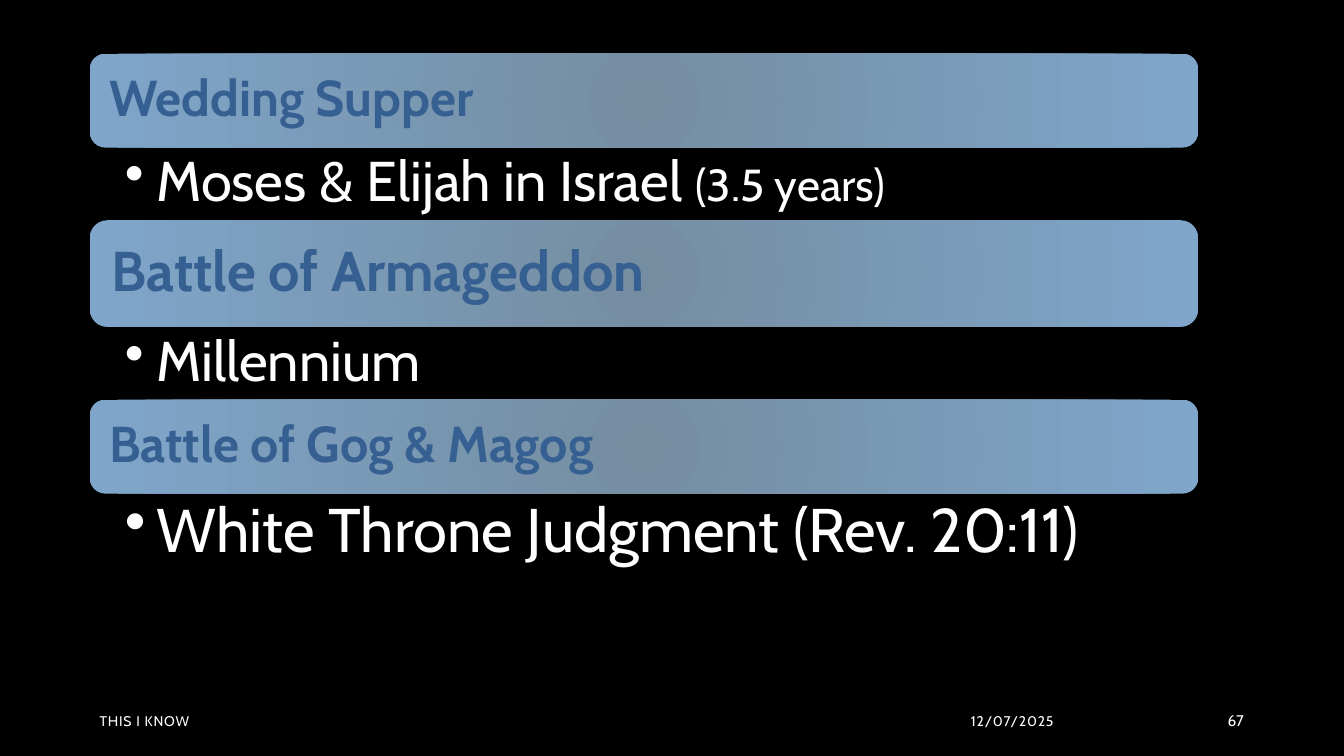
from lxml import etree
from pptx import Presentation
from pptx.dml.color import RGBColor as RGB
from pptx.enum.shapes import MSO_SHAPE as Shape
from pptx.enum.text import MSO_ANCHOR as Anchor, PP_ALIGN as Align
from pptx.oxml.ns import qn
from pptx.util import Cm, Pt

# Content: event, its size, bar height, bar padding; then what follows it,
# as (text, size) pieces, and the height of that row
EVENTS = [
    ("Wedding Supper", 36, 2.37, 0.38,
     [("Moses & Elijah in Israel ", 40), ("(3.5 years)", 32)], 1.83),
    ("Battle of Armageddon", 40, 2.69, 0.43, [("Millennium", 40)], 1.83),
    ("Battle of Gog & Magog", 36, 2.37, 0.38,
     [("White Throne Judgment (Rev. 20:11)", 44)], 2.06),
]
# Footer: text, left, width, alignment, size, letter spacing in 1/100 pt
FOOTER = [
    ("12/07/2025", 21.16, 5.64, Align.RIGHT, 10, 60),
    ("THIS I KNOW", 2.26, 10.72, Align.LEFT, 10, 60),
    ("67", 27.94, 3.66, Align.RIGHT, 11, 0),
]
THEME = {
    "font": "Cabin",
    "background": RGB(0x00, 0x00, 0x00),
    "text": RGB(0xFF, 0xFF, 0xFF),
    "event": RGB(0x37, 0x60, 0x92),
    "bar_center": RGB(0x75, 0x8D, 0xA1),
    "bar_edge": RGB(0x7F, 0xA6, 0xCA),
}
LEFT, TOP, WIDTH = 2.26, 1.35, 27.94
FOOTER_TOP, FOOTER_HEIGHT = 17.65, 1.02
INDENT = Cm(0.79)


def style(paragraph, size, color, bold=False):
    font = paragraph.font
    font.name, font.size, font.bold = THEME["font"], Pt(size), bold
    font.color.rgb = color


def set_margins(frame, left, top, right, bottom):
    frame.margin_left, frame.margin_top = Cm(left), Cm(top)
    frame.margin_right, frame.margin_bottom = Cm(right), Cm(bottom)


def fill_radial(bar):
    bar.fill.gradient()
    for stop, key in zip(bar.fill.gradient_stops, ("bar_center", "bar_edge")):
        stop.color.rgb = THEME[key]
    gradient = bar._element.spPr.find(qn("a:gradFill"))
    gradient.remove(gradient.find(qn("a:lin")))
    path = etree.SubElement(gradient, qn("a:path"), {"path": "circle"})
    etree.SubElement(path, qn("a:fillToRect"), dict.fromkeys("ltrb", "100000"))


def add_event(slide, top, text, size, height, padding):
    bar = slide.shapes.add_shape(
        Shape.ROUNDED_RECTANGLE, Cm(LEFT), Cm(top), Cm(WIDTH), Cm(height))
    bar.shadow.inherit = False
    bar.line.fill.background()
    fill_radial(bar)
    frame = bar.text_frame
    frame.word_wrap, frame.vertical_anchor = True, Anchor.MIDDLE
    set_margins(frame, padding, padding, padding, padding)
    title = frame.paragraphs[0]
    title.text, title.alignment, title.line_spacing = text, Align.LEFT, 0.9
    style(title, size, THEME["event"], bold=True)


def add_sequel(slide, top, pieces, height):
    frame = slide.shapes.add_textbox(
        Cm(LEFT), Cm(top), Cm(WIDTH), Cm(height)).text_frame
    frame.word_wrap = True
    set_margins(frame, 0.89, 0.15, 0.79, 0.15)
    bullet = frame.paragraphs[0]
    bullet.level, bullet.line_spacing = 1, 0.9
    props = bullet._p.get_or_add_pPr()
    props.set("marL", str(INDENT))
    props.set("indent", str(-INDENT))
    etree.SubElement(props, qn("a:buChar"), {"char": "•"})
    base_size = pieces[0][1]
    style(bullet, base_size, THEME["text"])
    for text, size in pieces:
        run = bullet.add_run()
        run.text = text
        if size != base_size:
            run.font.size = Pt(size)


def add_footer(slide, text, left, width, align, size, spacing):
    frame = slide.shapes.add_textbox(
        Cm(left), Cm(FOOTER_TOP), Cm(width), Cm(FOOTER_HEIGHT)).text_frame
    frame.word_wrap, frame.vertical_anchor = True, Anchor.MIDDLE
    line = frame.paragraphs[0]
    line.text, line.alignment = text, align
    style(line, size, THEME["text"])
    if spacing:
        line.runs[0]._r.get_or_add_rPr().set("spc", str(spacing))


def main():
    deck = Presentation()
    deck.slide_width, deck.slide_height = Cm(33.87), Cm(19.05)
    slide = deck.slides.add_slide(deck.slide_layouts[6])
    slide.background.fill.solid()
    slide.background.fill.fore_color.rgb = THEME["background"]

    # Events and what follows each, stacked without gaps
    top = TOP
    for event, size, bar_height, padding, pieces, row_height in EVENTS:
        add_event(slide, top, event, size, bar_height, padding)
        top += bar_height
        add_sequel(slide, top, pieces, row_height)
        top += row_height

    # Footer
    for item in FOOTER:
        add_footer(slide, *item)

    deck.save("out.pptx")


if __name__ == "__main__":
    main()
